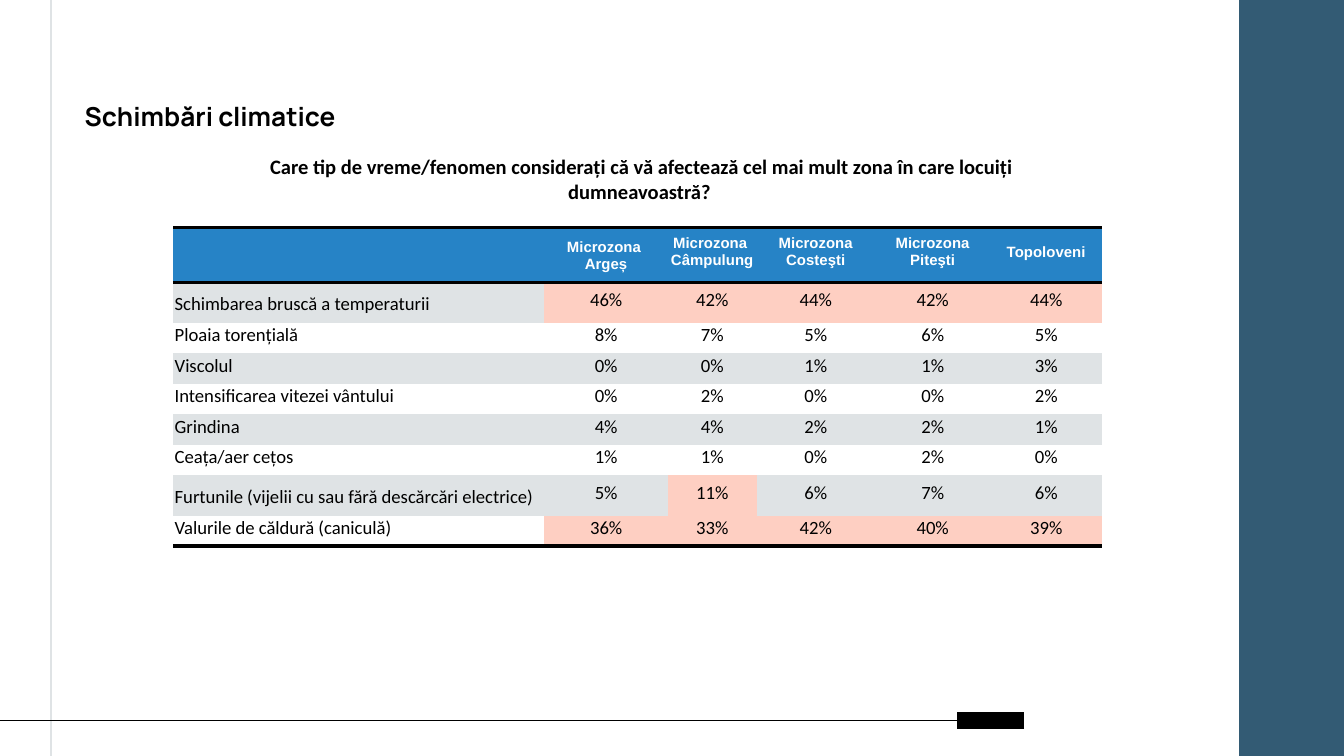
from lxml import etree
from pptx import Presentation
from pptx.dml.color import RGBColor
from pptx.enum.shapes import MSO_CONNECTOR, MSO_SHAPE
from pptx.enum.text import MSO_ANCHOR, PP_ALIGN
from pptx.oxml.ns import qn
from pptx.util import Inches, Pt

LEFT, CENTER = PP_ALIGN.LEFT, PP_ALIGN.CENTER
TOP, MIDDLE, BOTTOM = MSO_ANCHOR.TOP, MSO_ANCHOR.MIDDLE, MSO_ANCHOR.BOTTOM
STRAIGHT, RECTANGLE = MSO_CONNECTOR.STRAIGHT, MSO_SHAPE.RECTANGLE
PLAIN_TABLE_STYLE = "{2D5ABB26-0587-4C30-8999-92F81FD0307C}"

# Content
TITLE = "Schimbări climatice"
QUESTION = ("Care tip de vreme/fenomen considerați că vă afectează cel mai mult "
            "zona în care locuiți dumneavoastră? ")
ZONES = ["", "Microzona \nArgeș", "Microzona \nCâmpulung",
         "Microzona Costeşti", "Microzona Piteşti", "Topoloveni"]
PHENOMENA = [
    ("Schimbarea bruscă a temperaturii", 46, 42, 44, 42, 44),
    ("Ploaia torențială", 8, 7, 5, 6, 5),
    ("Viscolul", 0, 0, 1, 1, 3),
    ("Intensificarea vitezei vântului", 0, 2, 0, 0, 2),
    ("Grindina", 4, 4, 2, 2, 1),
    ("Ceața/aer cețos", 1, 1, 0, 2, 0),
    ("Furtunile (vijelii cu sau fără descărcări electrice)", 5, 11, 6, 7, 6),
    ("Valurile de căldură (caniculă)", 36, 33, 42, 40, 39),
]
HIGHLIGHT_FROM = 10  # percentages above this stand out

COLORS = {"panel": "335B74", "grey": "DFE3E5", "black": "000000",
          "white": "FFFFFF", "header": "2683C6", "highlight": "FECFC2"}

# Layout, in inches, on a 16:9 slide
WIDTH = 10
HEIGHT = WIDTH * 9 / 16
PANEL_LEFT = 9.22
FOOTER_Y = 5.36
TABLE_LEFT, TABLE_TOP, TABLE_HEIGHT = 1.29, 1.69, 2.37
COLUMNS = [2.76, 0.92, 0.66, 0.88, 0.86, 0.83]
HEADER_HEIGHT, TALL_HEIGHT, TALL_ROWS = 0.41, 0.3, (1, 7)


def color(name):
    return RGBColor.from_string(COLORS[name])


def format_text(frame, size, font, ink, bold, align):
    for para in frame.paragraphs:
        para.alignment = align
        for span in para.runs:
            span.font.size = Pt(size)
            span.font.name = font
            span.font.bold = bold
            span.font.color.rgb = color(ink)


def set_margins(target, left, top, right, bottom):
    target.margin_left, target.margin_right = Inches(left), Inches(right)
    target.margin_top, target.margin_bottom = Inches(top), Inches(bottom)


def add_line(slide, start, end, ink, weight):
    line = slide.shapes.add_connector(STRAIGHT, *map(Inches, start + end))
    line.line.color.rgb = color(ink)
    line.line.width = Pt(weight)
    etree.SubElement(line._element.spPr, qn("a:effectLst"))


def add_border(cell, side):
    border = etree.SubElement(cell._tc.get_or_add_tcPr(), qn(f"a:ln{side}"), w=str(Pt(2)))
    fill = etree.SubElement(border, qn("a:solidFill"))
    etree.SubElement(fill, qn("a:srgbClr"), val=COLORS["black"])


def add_decoration(slide):
    panel = slide.shapes.add_shape(RECTANGLE, Inches(PANEL_LEFT), 0,
                                   Inches(WIDTH - PANEL_LEFT), Inches(HEIGHT))
    panel.shadow.inherit = False
    panel.fill.solid()
    panel.fill.fore_color.rgb = color("panel")
    panel.line.fill.background()
    add_line(slide, (0.38, -0.04), (0.38, 5.66), "grey", 0.75)
    add_line(slide, (7.62, FOOTER_Y), (7.12, FOOTER_Y), "black", 9)
    add_line(slide, (7.12, FOOTER_Y), (-0.09, FOOTER_Y), "black", 0.75)


def add_headings(slide):
    title = slide.shapes.title
    title.left, title.top, title.width, title.height = map(Inches, (0.53, 0.65, 8.43, 0.4))
    title.text_frame.text = TITLE
    title.text_frame.vertical_anchor = TOP
    set_margins(title.text_frame, 0.1, 0.1, 0.1, 0.1)
    format_text(title.text_frame, 14, "Manrope", "black", True, LEFT)

    box = slide.shapes.add_textbox(*map(Inches, (1.82, 1.1, 5.91, 0.47)))
    box.text_frame.word_wrap = True
    box.text_frame.text = QUESTION
    format_text(box.text_frame, 11, "Calibri", "black", True, CENTER)


def add_results(slide):
    rows = len(PHENOMENA) + 1
    plain_height = ((TABLE_HEIGHT - HEADER_HEIGHT - TALL_HEIGHT * len(TALL_ROWS))
                    / (rows - 1 - len(TALL_ROWS)))
    frame = slide.shapes.add_table(rows, len(COLUMNS), Inches(TABLE_LEFT), Inches(TABLE_TOP),
                                   Inches(sum(COLUMNS)), Inches(TABLE_HEIGHT))
    table = frame.table
    table.first_row = table.horz_banding = False
    table._tbl.tblPr.find(qn("a:tableStyleId")).text = PLAIN_TABLE_STYLE
    for column, width in zip(table.columns, COLUMNS):
        column.width = Inches(width)

    for r, values in enumerate([ZONES, *PHENOMENA]):
        header = r == 0
        height = HEADER_HEIGHT if header else TALL_HEIGHT if r in TALL_ROWS else plain_height
        table.rows[r].height = Inches(height)
        for c, value in enumerate(values):
            cell = table.cell(r, c)
            number = not header and c > 0
            cell.text_frame.text = f"{value}%" if number else value
            cell.vertical_anchor = MIDDLE if header or number else BOTTOM
            set_margins(cell, 0.01, 0.01, 0.01, 0 if header and c == 1 else 0.05)
            if header:
                format_text(cell.text_frame, 8, "Arial", "white", True, CENTER)
                add_border(cell, "T")
            else:
                format_text(cell.text_frame, 10, "Calibri", "black", False,
                            CENTER if number else LEFT)
            if r in (0, rows - 1):
                add_border(cell, "B")

            shade = "header" if header else "grey" if r % 2 else "white"
            if number and value > HIGHLIGHT_FROM:
                shade = "highlight"
            cell.fill.solid()
            cell.fill.fore_color.rgb = color(shade)


def main():
    deck = Presentation()
    deck.slide_width, deck.slide_height = Inches(WIDTH), Inches(HEIGHT)
    slide = deck.slides.add_slide(deck.slide_layouts[5])
    add_decoration(slide)
    add_headings(slide)
    add_results(slide)
    deck.save("out.pptx")


if __name__ == "__main__":
    main()
